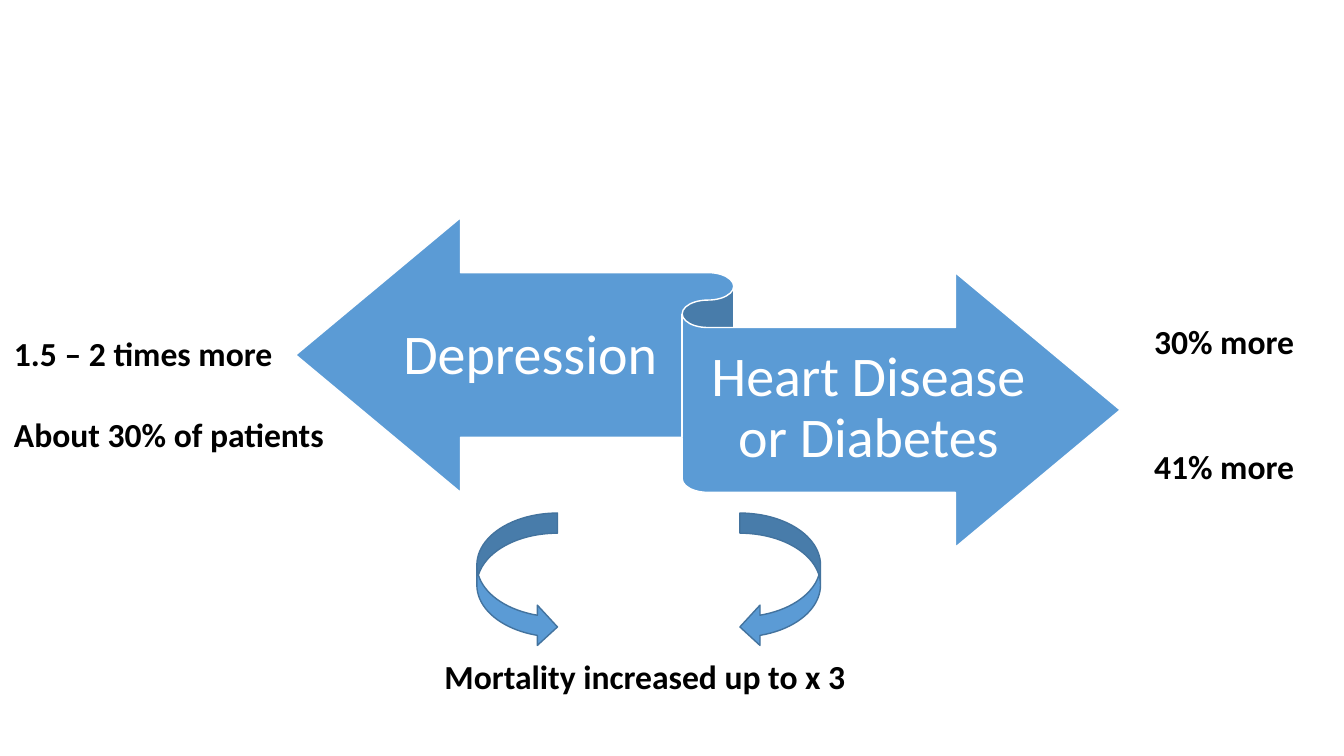
from pptx import Presentation
from pptx.dml.color import RGBColor
from pptx.enum.shapes import MSO_SHAPE
from pptx.enum.text import MSO_ANCHOR, MSO_AUTO_SIZE, PP_ALIGN
from pptx.util import Inches, Pt

RIBBON = MSO_SHAPE.LEFT_RIGHT_RIBBON
CURVED_RIGHT = MSO_SHAPE.CURVED_RIGHT_ARROW
CURVED_LEFT = MSO_SHAPE.CURVED_LEFT_ARROW
MIDDLE = MSO_ANCHOR.MIDDLE
CENTER = PP_ALIGN.CENTER
FIT_SHAPE = MSO_AUTO_SIZE.SHAPE_TO_FIT_TEXT

SLIDE_WIDTH, SLIDE_HEIGHT = Inches(13.33), Inches(7.5)
COLUMN, ROW = SLIDE_WIDTH / 100, SLIDE_HEIGHT / 100
FONT = "Calibri"
COLORS = {"blue": "5B9BD5", "edge": "43739E", "white": "FFFFFF", "black": "000000"}

NOTE_HEIGHT = 6.67
LABEL_HEIGHT = 21.33
EMPTY_LINE = Pt(29.3)


def color(name):
    return RGBColor.from_string(COLORS[name])


def place(left, top, width, height):
    return (
        round(left * COLUMN),
        round(top * ROW),
        round(width * COLUMN),
        round(height * ROW),
    )


def add_arrow(slide, kind, box, line_color):
    shape = slide.shapes.add_shape(kind, *place(*box))
    shape.shadow.inherit = False
    shape.fill.solid()
    shape.fill.fore_color.rgb = color("blue")
    shape.line.color.rgb = color(line_color)
    shape.line.width = Pt(1)


def format_runs(paragraph, size, color_name, bold):
    for run in paragraph.runs:
        run.font.name = FONT
        run.font.size = Pt(size)
        run.font.bold = bold
        run.font.color.rgb = color(color_name)


def add_ribbon_label(slide, text, box):
    text_frame = slide.shapes.add_textbox(*place(*box)).text_frame
    text_frame.word_wrap = True
    text_frame.vertical_anchor = MIDDLE
    text_frame.margin_left = text_frame.margin_right = 0
    text_frame.margin_top, text_frame.margin_bottom = Inches(0.16), Inches(0.17)
    text_frame.text = text
    paragraph = text_frame.paragraphs[0]
    paragraph.alignment = CENTER
    paragraph.line_spacing = 0.9
    format_runs(paragraph, 40, "white", False)


def add_note(slide, lines, box):
    text_frame = slide.shapes.add_textbox(*place(*box)).text_frame
    text_frame.word_wrap = False
    text_frame.auto_size = FIT_SHAPE
    text_frame.text = "\n".join(lines)
    for index, paragraph in enumerate(text_frame.paragraphs):
        if index:
            paragraph.space_before = EMPTY_LINE
        format_runs(paragraph, 24, "black", True)


def main():
    presentation = Presentation()
    presentation.slide_width = SLIDE_WIDTH
    presentation.slide_height = SLIDE_HEIGHT
    slide = presentation.slides.add_slide(presentation.slide_layouts[6])

    add_arrow(slide, RIBBON, (22, 28.8, 61.35, 43.6), "white")
    add_ribbon_label(slide, "Depression", (29.33, 36.53, 20.25, LABEL_HEIGHT))
    add_ribbon_label(
        slide, "Heart Disease or Diabetes", (52.65, 43.47, 23.93, LABEL_HEIGHT)
    )

    for text, top in (("30% more", 41.73), ("41% more", 58.27)):
        add_note(slide, [text], (85.13, top, 12, NOTE_HEIGHT))
    add_note(
        slide,
        ["1.5 – 2 times more", "About 30% of patients"],
        (0.3, 43.33, 24.83, 17.47),
    )

    for kind, left in ((CURVED_RIGHT, 35.48), (CURVED_LEFT, 55.05)):
        add_arrow(slide, kind, (left, 67.87, 6, 17.73), "edge")
    add_note(
        slide, ["Mortality increased up to x 3"], (32.33, 86.13, 31.65, NOTE_HEIGHT)
    )

    presentation.save("out.pptx")


if __name__ == "__main__":
    main()
